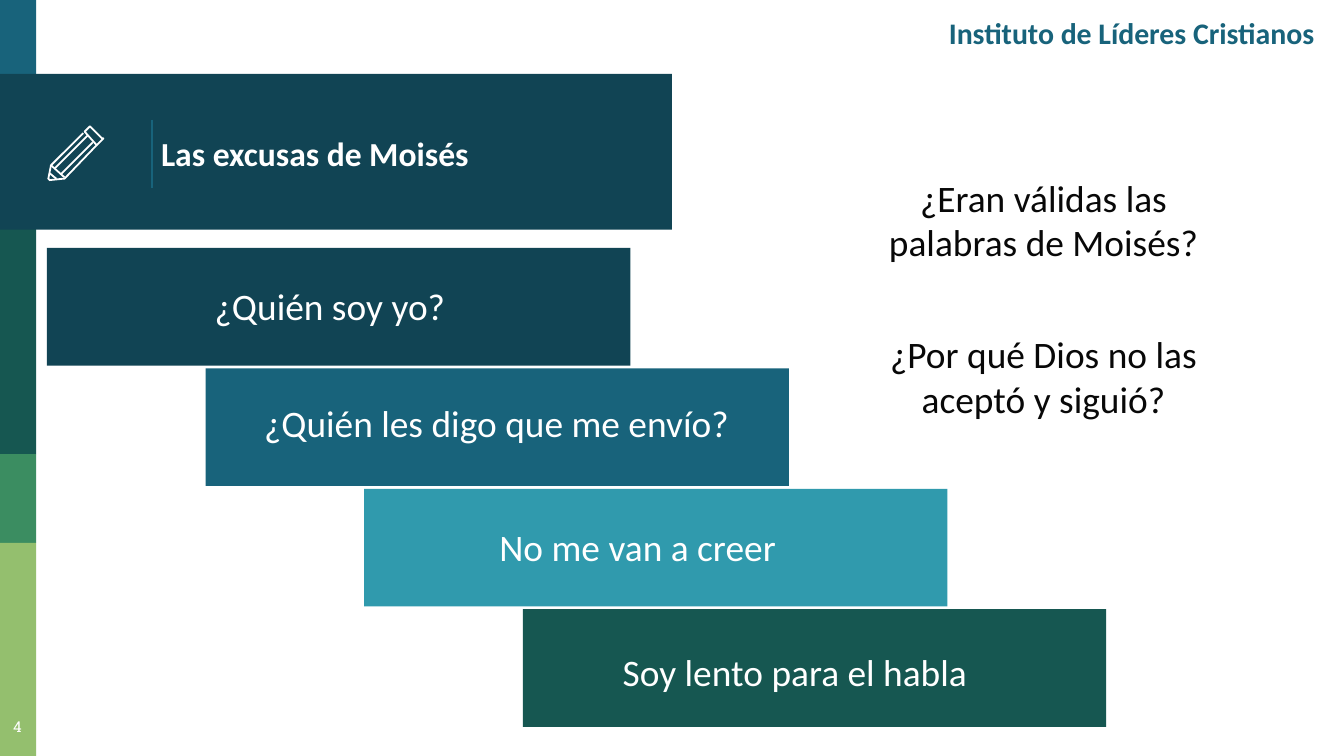
"""Build the slide on Moses' excuses on a grid of 100 columns by 56.25 rows."""
import dataclasses

import pptx
import pptx.dml.color
import pptx.enum.shapes
import pptx.enum.text
import pptx.oxml.ns
import pptx.util
from lxml import etree

COLS, ROWS = 100, 56.25
ALIGN = pptx.enum.text.PP_ALIGN
ANCHOR = pptx.enum.text.MSO_ANCHOR


@dataclasses.dataclass(frozen=True)
class Theme:
    navy: str = "114454"
    blue: str = "18637B"
    aqua: str = "309AAD"
    pine: str = "165751"
    green: str = "3B8D61"
    lime: str = "94BF6E"
    white: str = "FFFFFF"
    ink: str = "080808"
    font: str = "Calibri"
    number_font: str = "Roboto Slab"
    body: int = 20
    title: int = 18
    header: int = 16
    number: int = 8


THEME = Theme()


def cell(n):
    return pptx.util.Inches(n / 10)


def rgb(color):
    return pptx.dml.color.RGBColor.from_string(color)


def add_block(shapes, x, y, w, h, color):
    sp = shapes.add_shape(pptx.enum.shapes.MSO_SHAPE.RECTANGLE, cell(x), cell(y), cell(w), cell(h))
    sp.shadow.inherit = False
    sp.fill.solid()
    sp.fill.fore_color.rgb = rgb(color)
    sp.line.fill.background()


def add_text(shapes, x, y, w, h, paragraphs, size, color, align=ALIGN.CENTER,
             bold=False, font=THEME.font, anchor=ANCHOR.TOP, inset=1, gap=0):
    tf = shapes.add_textbox(cell(x), cell(y), cell(w), cell(h)).text_frame
    tf.word_wrap = True
    tf.vertical_anchor = anchor
    tf.margin_left = tf.margin_right = cell(1)
    tf.margin_top = tf.margin_bottom = cell(inset)
    for i, lines in enumerate(paragraphs):
        p = tf.add_paragraph() if i else tf.paragraphs[0]
        p.alignment = align
        if i:
            p.space_before = pptx.util.Pt(gap)
        for j, line in enumerate(lines):
            if j:
                p.add_line_break()
            r = p.add_run()
            r.text = line
            r.font.size = pptx.util.Pt(size)
            r.font.name = font
            r.font.bold = bold
            r.font.color.rgb = rgb(color)


def add_line(shapes, x1, y1, x2, y2, color, width):
    line = shapes.add_connector(pptx.enum.shapes.MSO_CONNECTOR.STRAIGHT,
                                cell(x1), cell(y1), cell(x2), cell(y2))
    line.line.color.rgb = rgb(color)
    line.line.width = pptx.util.Pt(width)
    etree.SubElement(line._element.spPr, pptx.oxml.ns.qn("a:effectLst"))


def add_outline(shapes, points, closed, color, width):
    start, *rest = [(round(x * 10), round(y * 10)) for x, y in points]
    builder = shapes.build_freeform(*start, scale=cell(0.1))
    builder.add_line_segments(rest, close=closed)
    sp = builder.convert_to_shape()
    sp.shadow.inherit = False
    sp.fill.background()
    sp.line.color.rgb = rgb(color)
    sp.line.width = pptx.util.Pt(width)


def add_pencil(shapes):
    group = shapes.add_group_shape().shapes
    cap = [(7.6, 10.3), (6.8, 9.5), (6.7, 9.4), (6.6, 9.5), (6.3, 9.8),
           (7.2, 10.8), (7.6, 10.4), (7.7, 10.3)]
    body = [(6.2, 9.9), (3.8, 12.3), (3.6, 13.3), (3.7, 13.4), (4.7, 13.3),
            (4.8, 13.3), (7.2, 10.8)]
    add_outline(group, cap, True, THEME.white, 0.96)
    add_outline(group, body, False, THEME.white, 0.96)
    for ends in ((6.9, 10.6, 4.5, 13), (4.1, 12.5, 6.5, 10.1),
                 (4.2, 13.3, 3.7, 12.9), (3.8, 12.3, 4.8, 13.2)):
        add_line(group, *ends, THEME.white, 0.96)


def add_sidebar(shapes):
    bands = [(0, 5.5, THEME.blue), (17, 33.8, THEME.pine),
             (33.8, 40.4, THEME.green), (40.4, ROWS, THEME.lime)]
    for top, bottom, color in bands:
        add_block(shapes, 0, top, 2.7, bottom - top, color)
    add_text(shapes, -0.6, 52.7, 3.8, 3.5, [["4"]], THEME.number, THEME.white,
             font=THEME.number_font)


def add_title(shapes):
    add_block(shapes, 0, 5.5, 50, 11.6, THEME.navy)
    add_line(shapes, 11.3, 8.9, 11.3, 14, THEME.blue, 0.75)
    add_text(shapes, 11, 5.8, 42.2, 11.2, [["Las excusas de Moisés"]], THEME.title,
             THEME.white, ALIGN.LEFT, bold=True, anchor=ANCHOR.MIDDLE)
    add_pencil(shapes)


def add_steps(shapes):
    steps = [("¿Quién soy yo?", THEME.navy, 5.4, 20.6),
             ("¿Quién les digo que me envío?", THEME.blue, 17.8, 29.3),
             ("No me van a creer", THEME.aqua, 28.3, 38.5),
             ("Soy lento para el habla", THEME.pine, 40, 47.8)]
    for i, (label, color, x, y) in enumerate(steps):
        add_block(shapes, 3.5 + 11.8 * i, 18.45 + 8.96 * i, 43.4, 8.75, color)
        add_text(shapes, x, y, 38.3, 4.4, [[label]], THEME.body, THEME.white, inset=0.5)


def main():
    prs = pptx.Presentation()
    prs.slide_width, prs.slide_height = cell(COLS), cell(ROWS)
    shapes = prs.slides.add_slide(prs.slide_layouts[6]).shapes
    add_sidebar(shapes)
    add_title(shapes)
    add_text(shapes, 61.8, 0.4, 37, 4.1, [["Instituto de Líderes Cristianos"]],
             THEME.header, THEME.blue, ALIGN.RIGHT, bold=True, anchor=ANCHOR.MIDDLE)
    add_steps(shapes)
    questions = [["¿Eran válidas las", "palabras de Moisés?"],
                 ["¿Por qué Dios no las aceptó y siguió?"]]
    add_text(shapes, 61.8, 12, 31.7, 22, questions, THEME.body, THEME.ink, gap=36)
    prs.save("out.pptx")


if __name__ == "__main__":
    main()
